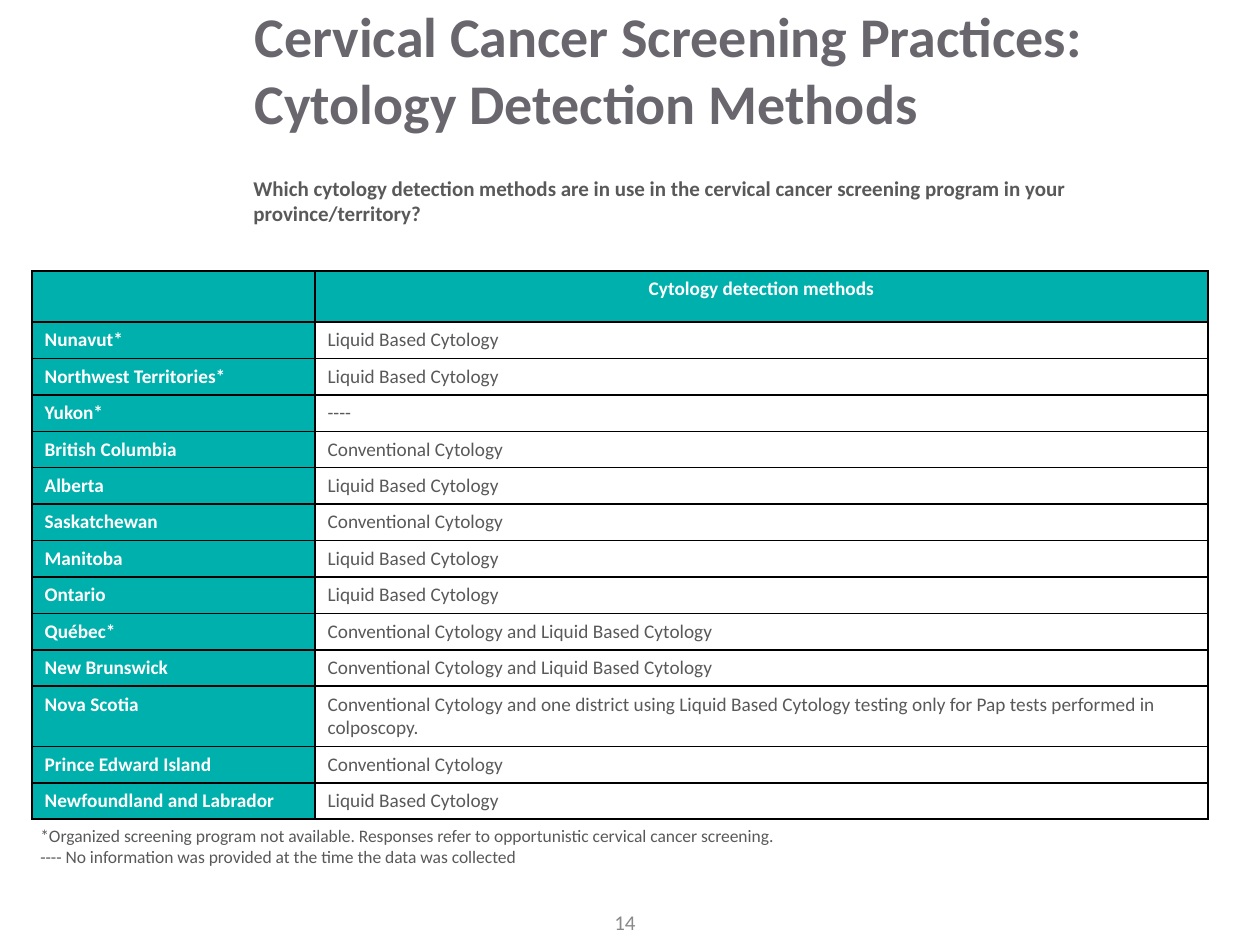
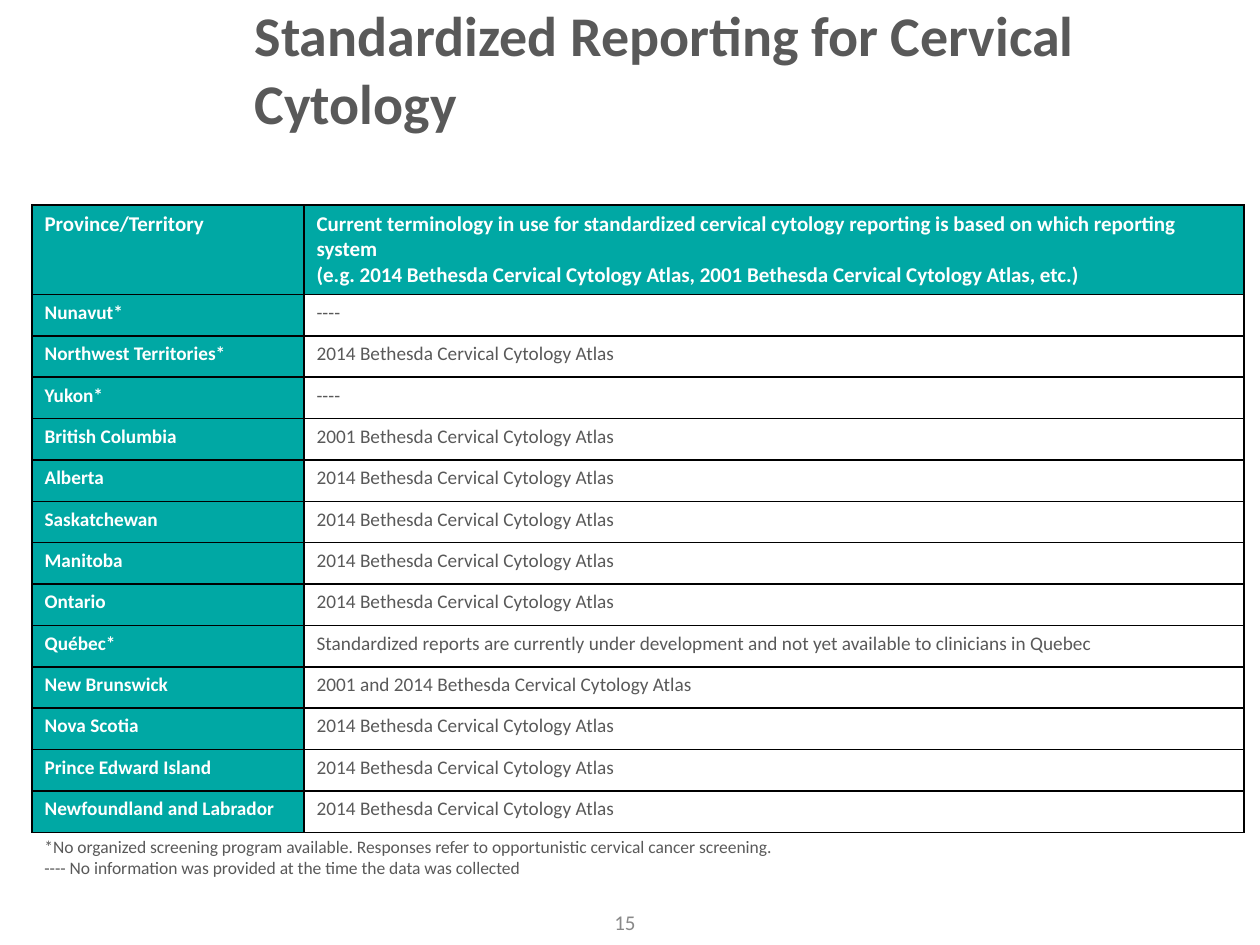
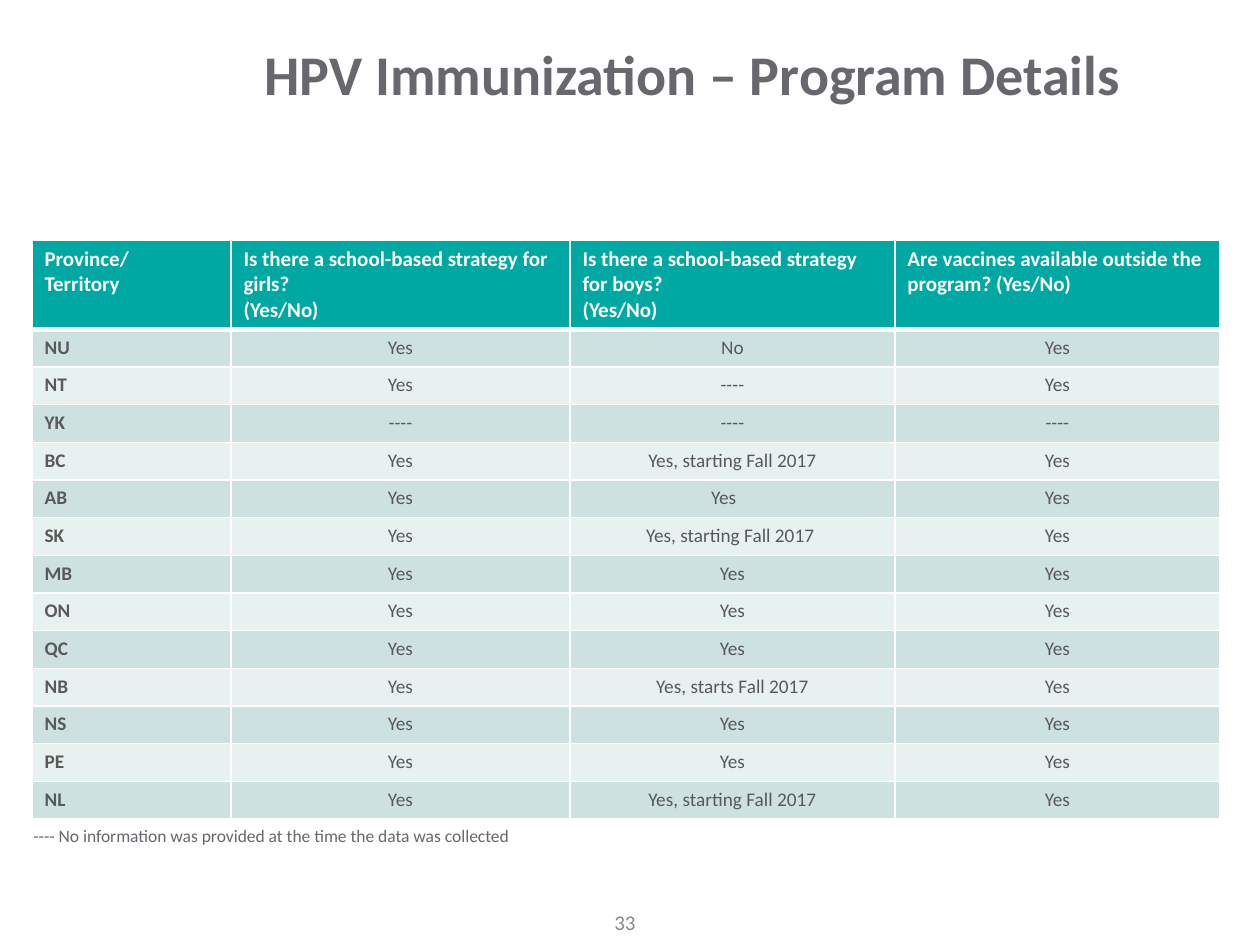
"""Build three slides of tables on cervical screening and HPV immunization."""
from lxml import etree
from pptx import Presentation
from pptx.dml.color import RGBColor
from pptx.enum.text import MSO_ANCHOR, MSO_AUTO_SIZE, PP_ALIGN
from pptx.oxml.ns import qn
from pptx.util import Emu, Pt

LEFT, CENTER = PP_ALIGN.LEFT, PP_ALIGN.CENTER
MIDDLE, TOP = MSO_ANCHOR.MIDDLE, MSO_ANCHOR.TOP
NO_AUTOFIT = MSO_AUTO_SIZE.NONE
EMU_PER_PX = 914400 / 126
FONT = "Calibri"
WHITE, BLACK = "FFFFFF", "000000"
TEXT, PURPLE_GRAY, PAGE_GRAY = "595959", "69676D", "898989"
BRIGHT_TEAL, TEAL = "00B0AC", "00A8A4"
BANDS = ("CCE1E0", "E7F1F0")
TITLE_ONLY = 5
PAGE_NUMBER_BOX = (546, 903, 158, 38)

LIQUID, CONVENTIONAL = "Liquid Based Cytology", "Conventional Cytology"
BOTH = "Conventional Cytology and Liquid Based Cytology"
ATLAS_2001 = "2001 Bethesda Cervical Cytology Atlas"
ATLAS_2014 = "2014 Bethesda Cervical Cytology Atlas"
NO_DATA = "----"
NO_DATA_NOTE = "---- No information was provided at the time the data was collected"
FALL_2017 = "Yes, starting Fall 2017"

PROVINCES = [
    "Nunavut*", "Northwest Territories*", "Yukon*", "British Columbia", "Alberta",
    "Saskatchewan", "Manitoba", "Ontario", "Québec*", "New Brunswick",
    "Nova Scotia", "Prince Edward Island", "Newfoundland and Labrador",
]
METHODS = [
    LIQUID, LIQUID, NO_DATA, CONVENTIONAL, LIQUID, CONVENTIONAL, LIQUID, LIQUID,
    BOTH, BOTH,
    "Conventional Cytology and one district using Liquid Based Cytology testing "
    "only for Pap tests performed in colposcopy.",
    CONVENTIONAL, LIQUID,
]
SYSTEMS = [
    NO_DATA, ATLAS_2014, NO_DATA, ATLAS_2001, *[ATLAS_2014] * 4,
    "Standardized reports are currently under development and not yet available "
    "to clinicians in Quebec",
    "2001 and 2014 Bethesda Cervical Cytology Atlas", *[ATLAS_2014] * 3,
]
CODES = ["NU", "NT", "YK", "BC", "AB", "SK", "MB", "ON", "QC", "NB", "NS", "PE", "NL"]
GIRLS = ["Yes", "Yes", NO_DATA, *["Yes"] * 10]
BOYS = [
    "No", NO_DATA, NO_DATA, FALL_2017, "Yes", FALL_2017, "Yes", "Yes", "Yes",
    "Yes, starts Fall 2017", "Yes", "Yes", FALL_2017,
]
OUTSIDE = GIRLS[:1] + GIRLS[1:]

SLIDES = [
    {
        "page": 14,
        "title": "Cervical Cancer Screening Practices: Cytology Detection Methods",
        "title_color": PURPLE_GRAY, "title_box": (242, 32, 966, 73),
        "question": "Which cytology detection methods are in use in the cervical cancer "
                    "screening program in your province/territory?",
        "note": "*Organized screening program not available. Responses refer to "
                "opportunistic cervical cancer screening.\n" + NO_DATA_NOTE,
        "note_color": TEXT, "note_box": (28, 819, 804, 55),
        "header": ["", "Cytology detection methods"],
        "header_size": 11, "header_align": CENTER, "accent": BRIGHT_TEAL,
        "columns": [PROVINCES, METHODS], "widths": [283, 893],
        "table_at": (32, 271), "table_height": 533, "fixed_rows": {11: 60},
        "banded": False,
    },
    {
        "page": 15,
        "title": "Standardized Reporting for Cervical Cytology",
        "title_color": TEXT, "title_box": (242, 0, 965, 136),
        "note": "*No organized screening program available. Responses refer to "
                "opportunistic cervical cancer screening.\n" + NO_DATA_NOTE,
        "note_color": TEXT, "note_box": (32, 830, 1029, 55),
        "header": [
            "Province/Territory",
            "Current terminology in use for standardized cervical cytology reporting "
            "is based on which reporting system\n(e.g. 2014 Bethesda Cervical Cytology "
            "Atlas, 2001 Bethesda Cervical Cytology Atlas, etc.)",
        ],
        "header_size": 12, "header_align": LEFT, "accent": TEAL,
        "columns": [PROVINCES, SYSTEMS], "widths": [272, 940],
        "table_at": (32, 205), "table_height": 627, "fixed_rows": {0: 89},
        "banded": False,
    },
    {
        "page": 33,
        "title": "HPV Immunization – Program Details",
        "title_color": PURPLE_GRAY, "title_box": (252, 5, 956, 136),
        "note": NO_DATA_NOTE,
        "note_color": PURPLE_GRAY, "note_box": (21, 819, 536, 34), "note_fill": WHITE,
        "header": [
            "Province/\nTerritory",
            "Is there a school-based strategy for girls?\n(Yes/No)",
            "Is there a school-based strategy for boys?\n(Yes/No)",
            "Are vaccines available outside the program? (Yes/No)",
        ],
        "header_size": 12, "header_align": LEFT, "accent": TEAL,
        "columns": [CODES, GIRLS, BOYS, OUTSIDE], "widths": [199, 339, 325, 325],
        "table_at": (32, 240), "table_height": 579, "fixed_rows": {0: 89},
        "banded": True, "right_margins": {(5, 2): 30, (6, 2): 17},
    },
]


def px(length):
    """Turn a length in px into EMU."""
    return Emu(round(length * EMU_PER_PX))


def rgb(color):
    """Turn a hex string into a colour."""
    return RGBColor.from_string(color)


def write(frame, text, size, color, bold=False, align=LEFT):
    """Fill a text frame and format every paragraph alike."""
    frame.text = text
    frame.word_wrap = True
    for para in frame.paragraphs:
        para.alignment = align
        for span in para.runs:
            span.font.name = FONT
            span.font.size = Pt(size)
            span.font.bold = bold
            span.font.color.rgb = rgb(color)


def add_text(page, area, text, size, color, bold=False, align=LEFT, fill=None):
    """Add a text box at an area given in px."""
    box = page.shapes.add_textbox(*map(px, area))
    write(box.text_frame, text, size, color, bold, align)
    if fill:
        box.fill.solid()
        box.fill.fore_color.rgb = rgb(fill)


def set_borders(cell, color, top, bottom):
    """Draw the four borders of a cell, with side lines of one point."""
    properties = cell._tc.get_or_add_tcPr()
    for side, points in (("L", 1), ("R", 1), ("T", top), ("B", bottom)):
        line = etree.SubElement(properties, qn(f"a:ln{side}"), w=str(Pt(points)))
        fill = etree.SubElement(line, qn("a:solidFill"))
        etree.SubElement(fill, qn("a:srgbClr"), val=color)


def cell_style(content, row, column):
    """Return fill, text size, text colour, bold and alignment of a cell."""
    if row == 0:
        return content["accent"], content["header_size"], WHITE, True, content["header_align"]
    is_label = column == 0
    if content["banded"]:
        return BANDS[(row - 1) % 2], 11, TEXT, is_label, LEFT if is_label else CENTER
    if is_label:
        return content["accent"], 11, WHITE, True, LEFT
    return WHITE, 11, TEXT, False, LEFT


def add_grid(page, content):
    """Add the table of a slide, sharing spare height among its plain rows."""
    rows = [content["header"], *zip(*content["columns"])]
    widths, fixed = content["widths"], content["fixed_rows"]
    height, banded = content["table_height"], content["banded"]
    plain_height = (height - sum(fixed.values())) / (len(rows) - len(fixed))
    area = (*content["table_at"], sum(widths), height)
    table = page.shapes.add_table(len(rows), len(widths), *map(px, area)).table
    table.horz_banding = False
    for column, width in enumerate(widths):
        table.columns[column].width = px(width)
    for row, texts in enumerate(rows):
        table.rows[row].height = px(fixed.get(row, plain_height))
        top = 3 if banded and row == 1 else 1
        bottom = 3 if banded and row == 0 else 1
        for column, text in enumerate(texts):
            cell = table.cell(row, column)
            fill, *text_style = cell_style(content, row, column)
            set_borders(cell, WHITE if banded else BLACK, top, bottom)
            cell.fill.solid()
            cell.fill.fore_color.rgb = rgb(fill)
            cell.vertical_anchor = TOP
            write(cell.text_frame, text, *text_style)
            if (row, column) in content.get("right_margins", {}):
                cell.margin_right = px(content["right_margins"][row, column])


def add_title(page, content):
    """Place and format the title placeholder."""
    title = page.shapes.title
    title.left, title.top, title.width, title.height = map(px, content["title_box"])
    write(title.text_frame, content["title"], 32, content["title_color"], True)
    title.text_frame.auto_size = NO_AUTOFIT
    title.text_frame.vertical_anchor = MIDDLE


def main():
    """Build and save the deck."""
    deck = Presentation()
    deck.slide_width, deck.slide_height = px(1260), px(945)
    for content in SLIDES:
        page = deck.slides.add_slide(deck.slide_layouts[TITLE_ONLY])
        add_title(page, content)
        add_grid(page, content)
        if "question" in content:
            add_text(page, (241, 169, 1000, 63), content["question"], 12, TEXT, True)
        add_text(page, content["note_box"], content["note"], 10, content["note_color"],
                 fill=content.get("note_fill"))
        add_text(page, PAGE_NUMBER_BOX, str(content["page"]), 12, PAGE_GRAY, align=CENTER)
    deck.save("out.pptx")


if __name__ == "__main__":
    main()
